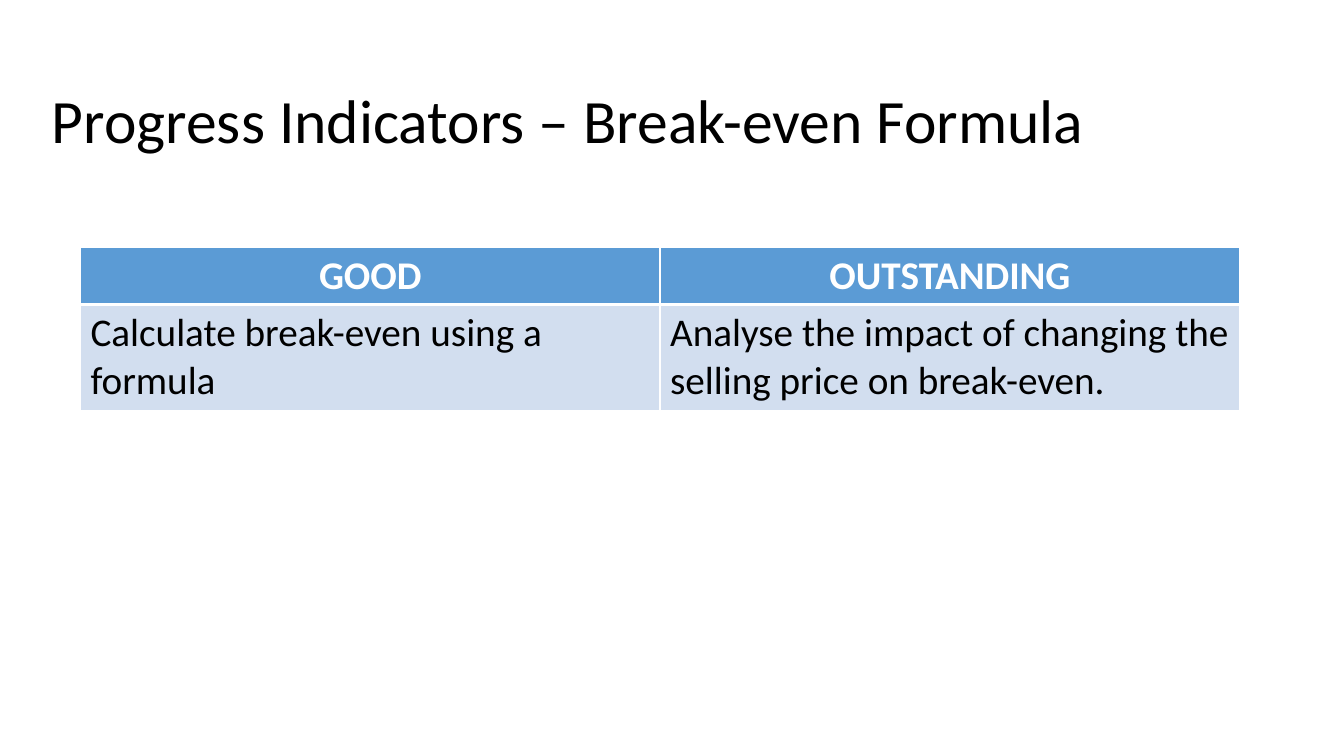
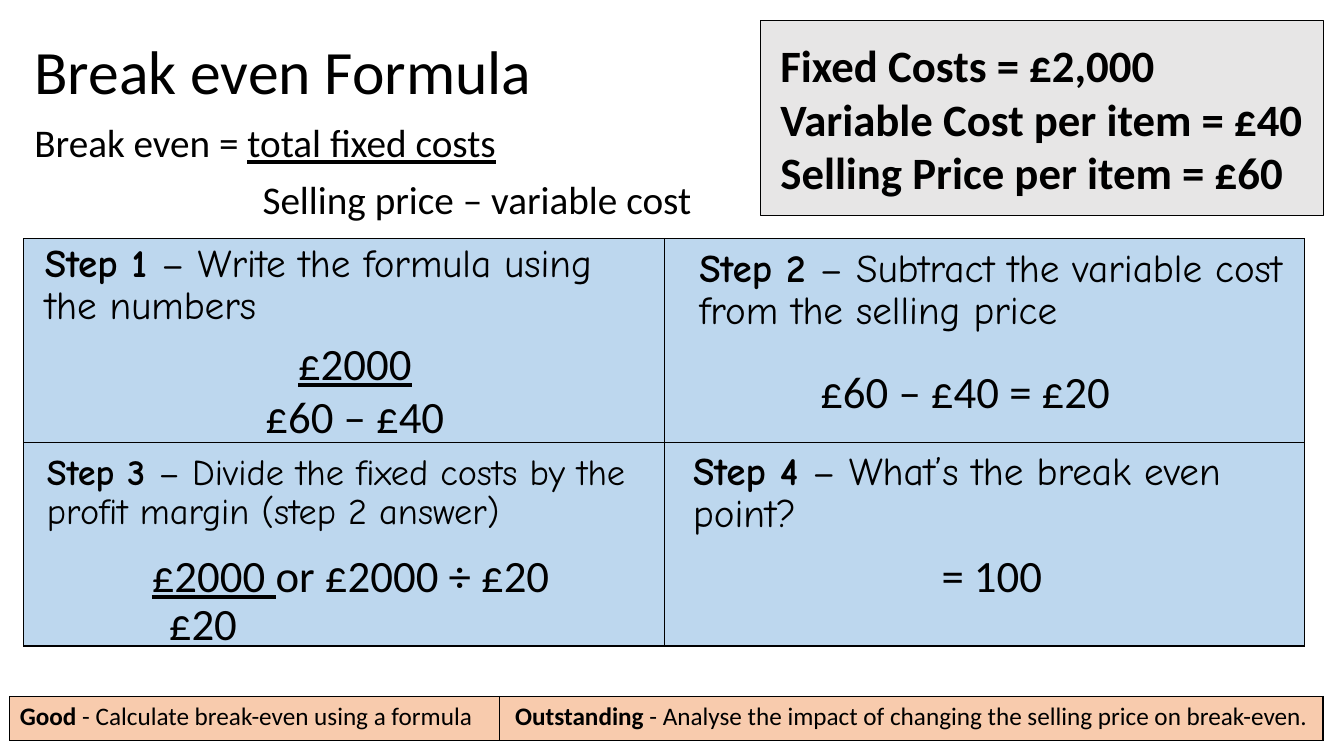
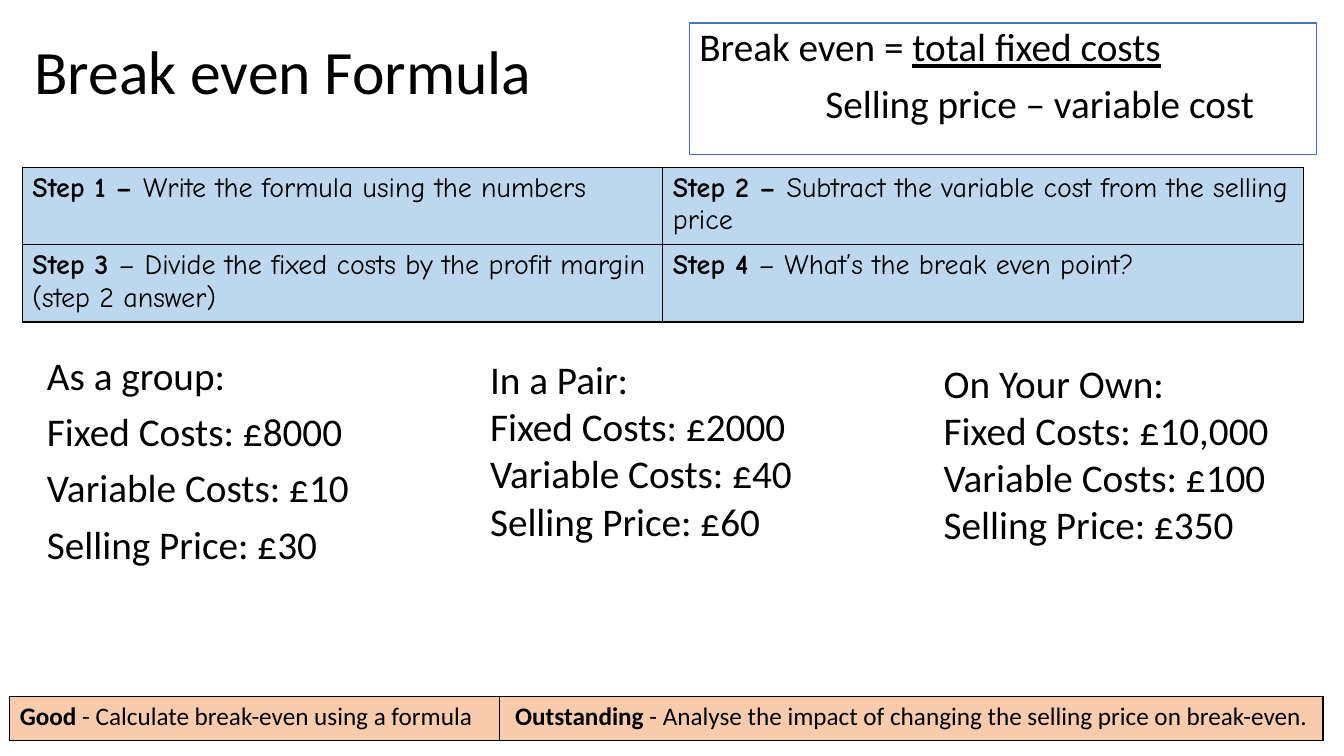
from pptx import Presentation
from pptx.dml.color import RGBColor
from pptx.enum.shapes import MSO_SHAPE
from pptx.enum.text import MSO_ANCHOR, PP_ALIGN
from pptx.oxml.ns import qn
from pptx.util import Pt
from lxml.etree import SubElement

BLACK = RGBColor(0x00, 0x00, 0x00)
WHITE = RGBColor(0xFF, 0xFF, 0xFF)
GREY = RGBColor(0xE7, 0xE6, 0xE6)
BLUE = RGBColor(0x5B, 0x9B, 0xD5)
PALE_BLUE = RGBColor(0xD2, 0xDE, 0xEF)
STEP_BLUE = RGBColor(0xBD, 0xD7, 0xEE)
OUTLINE_BLUE = RGBColor(0x44, 0x72, 0xC4)
PEACH = RGBColor(0xF8, 0xCB, 0xAD)

BODY_FONT = "Calibri"
STEP_FONT = "Comic Neue"
CENTER = PP_ALIGN.CENTER
BODY_SPACING = {"line_spacing": 0.9, "space_before": 10}
STEP_COLUMNS = (457.5, 457.5)

GOOD = "Calculate break-even using a formula"
OUTSTANDING = "Analyse the impact of changing the selling price on break-even."
STEPS = (
    "Write the formula using the numbers",
    "Subtract the variable cost from the selling price",
    "Divide the fixed costs by the profit margin (step 2 answer)",
    "What’s the break even point?",
)


def write(frame, paragraphs, size, font=BODY_FONT, color=BLACK, align=PP_ALIGN.LEFT,
          line_spacing=None, space_before=None):
    """Fill a text frame; a paragraph is a string or a list of (text, style), style "", "b" or "u"."""
    for index, content in enumerate(paragraphs):
        paragraph = frame.paragraphs[0] if index == 0 else frame.add_paragraph()
        paragraph.alignment = align
        if line_spacing:
            paragraph.line_spacing = line_spacing
        if space_before:
            paragraph.space_before = Pt(space_before)
        paragraph.font.name = font
        paragraph.font.size = Pt(size)
        paragraph.font.color.rgb = color
        runs = [(content, "")] if isinstance(content, str) else content
        for text, style in runs:
            run = paragraph.add_run()
            run.text = text
            if style == "b":
                run.font.bold = True
            elif style == "u":
                run.font.underline = True


def add_text(slide, box, paragraphs, size, anchor=MSO_ANCHOR.TOP, **style):
    frame = slide.shapes.add_textbox(*map(Pt, box)).text_frame
    frame.word_wrap = True
    frame.vertical_anchor = anchor
    write(frame, paragraphs, size, **style)
    return frame


def add_panel(slide, box, fill, outline, outline_width, anchor):
    panel = slide.shapes.add_shape(MSO_SHAPE.RECTANGLE, *map(Pt, box))
    panel.shadow.inherit = False
    panel.fill.solid()
    panel.fill.fore_color.rgb = fill
    panel.line.color.rgb = outline
    panel.line.width = Pt(outline_width)
    panel.text_frame.word_wrap = True
    panel.text_frame.vertical_anchor = anchor
    return panel.text_frame


def set_borders(cell, color, width=1, **side_widths):
    properties = cell._tc.get_or_add_tcPr()
    for side in "LRTB":
        line = SubElement(properties, qn(f"a:ln{side}"),
                          w=str(Pt(side_widths.get(side, width))))
        fill = SubElement(line, qn("a:solidFill"))
        SubElement(fill, qn("a:srgbClr"), val=str(color))


def add_table(slide, left, top, columns, rows):
    """Add a table without style bands, with the given column widths and row heights."""
    table = slide.shapes.add_table(len(rows), len(columns), Pt(left), Pt(top),
                                   Pt(sum(columns)), Pt(sum(rows))).table
    table.first_row = table.horz_banding = False
    for column, width in zip(table.columns, columns):
        column.width = Pt(width)
    for row, height in zip(table.rows, rows):
        row.height = Pt(height)
    return table


def format_cell(cell, fill, border, **side_widths):
    set_borders(cell, border, **side_widths)
    cell.fill.solid()
    cell.fill.fore_color.rgb = fill


def add_title(slide, text, box=(17.5, 18, 828, 71)):
    add_text(slide, box, [text], 44, MSO_ANCHOR.MIDDLE, line_spacing=0.9)


def write_formula(frame, denominator_indent):
    write(frame, [[("Break even = ", ""), ("total fixed costs", "u")],
                  "Selling price – variable cost"], 28, **BODY_SPACING)
    properties = frame.paragraphs[1]._p.get_or_add_pPr()
    properties.set("marL", str(Pt(denominator_indent)))


def step_runs(number, bold_dash=False):
    label, text = f"Step {number} ", STEPS[number - 1]
    if bold_dash:
        return [(label + "– ", "b"), (text, "")]
    return [(label, "b"), ("– " + text, "")]


def add_step_table(slide, left, top, row_height):
    table = add_table(slide, left, top, STEP_COLUMNS, (row_height, row_height))
    cells = list(table.iter_cells())
    for cell in cells:
        format_cell(cell, STEP_BLUE, BLACK)
    return cells


def add_indicator_footer(slide):
    table = add_table(slide, 7, 497.5, (350, 588), (31.5,))
    indicators = (("Good", GOOD, PP_ALIGN.LEFT), ("Outstanding", OUTSTANDING, CENTER))
    for cell, (level, text, align) in zip(table.iter_cells(), indicators):
        format_cell(cell, PEACH, BLACK)
        write(cell.text_frame, [[(level, "b"), (f" - {text}", "")]], 18, align=align)


def build_indicators(slide):
    add_title(slide, "Progress Indicators – Break-even Formula", (30, 29, 882, 119))
    table = add_table(slide, 57.5, 176.5, (414, 414), (41, 76))
    for column, (level, text) in enumerate((("GOOD", GOOD), ("OUTSTANDING", OUTSTANDING))):
        header, body = table.cell(0, column), table.cell(1, column)
        format_cell(header, BLUE, WHITE, B=3)
        write(header.text_frame, [[(level, "b")]], 28, color=WHITE, align=CENTER)
        format_cell(body, PALE_BLUE, WHITE, T=3)
        write(body.text_frame, [text], 28)


def build_worked_example(slide):
    add_step_table(slide, 17, 170.5, 145.5)
    add_title(slide, "Break even Formula")
    write_formula(add_text(slide, (17.5, 85, 518, 81), [], 28), 163)

    costs = add_panel(slide, (543, 15, 402.5, 139), GREY, BLACK, 0.75, MSO_ANCHOR.MIDDLE)
    costs.margin_left = Pt(14.4)
    write(costs, [[(line, "b")] for line in ("Fixed Costs = £2,000",
                                             "Variable Cost per item = £40",
                                             "Selling Price per item = £60")], 32)

    step_boxes = (
        ((25, 170.5, 448, 76), 28),
        ((492.5, 174, 448, 76), 28),
        ((26.5, 321, 448, 64), 25.9),
        ((488, 319, 448, 68), 28),
    )
    for number, (box, size) in enumerate(step_boxes, 1):
        add_text(slide, box, [step_runs(number)], size, font=STEP_FONT, **BODY_SPACING)

    workings = (
        ((177, 236, 153, 84), [[("£2000", "u")], "£60 – £40"]),
        ((561, 256, 257, 46), ["£60 – £40 = £20"]),
        ((85.5, 387.5, 330, 46), [[("£2000 ", "u"), ("or £2000 ÷ £20", "")]]),
        ((113, 422, 64, 46), ["£20"]),
        ((632, 388, 153, 46), ["= 100"]),
    )
    for box, paragraphs in workings:
        add_text(slide, box, paragraphs, 32, align=CENTER)
    add_indicator_footer(slide)


def build_practice(slide):
    for number, cell in enumerate(add_step_table(slide, 16, 119.5, 53.5), 1):
        write(cell.text_frame, [step_runs(number, bold_dash=number <= 2)], 20, font=STEP_FONT)
    add_title(slide, "Break even Formula")
    formula = add_panel(slide, (492.5, 16.5, 448, 94), WHITE, OUTLINE_BLUE, 1, MSO_ANCHOR.TOP)
    write_formula(formula, 90)

    problems = (
        ((26.5, 251, 238, 135), "As a group:", "8000", "10", "30", BODY_SPACING),
        ((343, 250.5, 280, 143), "In a Pair:", "2000", "40", "60", {}),
        ((667, 253, 279, 143), "On Your Own:", "10,000", "100", "350", {}),
    )
    for box, heading, fixed, variable, price, spacing in problems:
        add_text(slide, box, [heading, f"Fixed Costs: £{fixed}", f"Variable Costs: £{variable}",
                              f"Selling Price: £{price}"], 28, **spacing)
    add_indicator_footer(slide)


def main():
    presentation = Presentation()
    presentation.slide_width = Pt(960)
    presentation.slide_height = Pt(540)
    blank = presentation.slide_layouts[6]
    for build in (build_indicators, build_worked_example, build_practice):
        build(presentation.slides.add_slide(blank))
    presentation.save("out.pptx")


if __name__ == "__main__":
    main()
